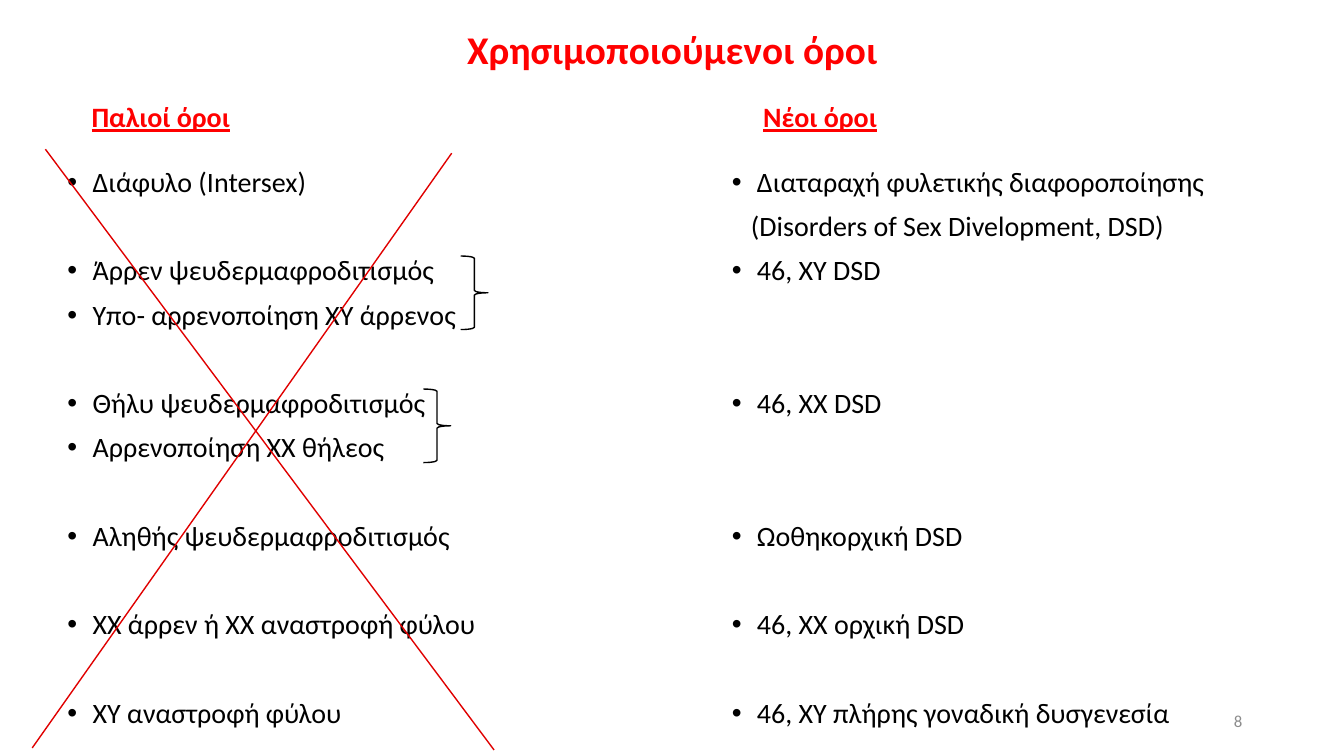
"""Build the slide that sets old terms beside new ones."""
from dataclasses import dataclass

import lxml.etree
import pptx
import pptx.dml.color
import pptx.enum.shapes
import pptx.enum.text
import pptx.oxml.ns
import pptx.util

Inches = pptx.util.Inches
Pt = pptx.util.Pt
ALIGN = pptx.enum.text.PP_ALIGN
ANCHOR = pptx.enum.text.MSO_ANCHOR

COLORS = {"ink": "000000", "red": "FF0000", "cross": "E00000", "gray": "8C8C8C"}
FONT = "Calibri"
PITCH = 31.6
BEFORE = 10


@dataclass
class Label:
    text: str
    box: tuple[float, float, float, float]
    size: int
    color: str = "red"
    bold: bool = True
    under: bool = False
    align: ALIGN = ALIGN.LEFT
    anchor: ANCHOR = ANCHOR.TOP


@dataclass
class Term:
    text: str
    gap: int = 0
    bullet: bool = True


@dataclass
class Column:
    box: tuple[float, float, float, float]
    terms: list[Term]


@dataclass
class Stroke:
    start: tuple[float, float]
    end: tuple[float, float]


LABELS = [
    Label("Χρησιμοποιούμενοι όροι", (0.09, 0.2, 13.15, 0.57), 28, align=ALIGN.CENTER),
    Label("Παλιοί όροι", (0.81, 0.94, 2.2, 0.44), 20, under=True),
    Label("Νέοι όροι", (7.47, 0.94, 1.74, 0.34), 20, under=True),
    Label("8", (9.42, 6.95, 3, 0.4), 12, "gray", False,
          align=ALIGN.RIGHT, anchor=ANCHOR.MIDDLE),
]

COLUMNS = [
    Column((7.16, 1.62, 6.17, 5.88), [
        Term("Διαταραχή φυλετικής διαφοροποίησης"),
        Term("(Disorders of Sex Divelopment, DSD)", bullet=False),
        Term("46, XY DSD"),
        Term("46, XX DSD", 2),
        Term("Ωοθηκορχική DSD", 2),
        Term("46, XX ορχική DSD", 1),
        Term("46, XY πλήρης γοναδική δυσγενεσία", 1),
    ]),
    Column((0.57, 1.62, 5.74, 5.88), [
        Term("Διάφυλο (Intersex)"),
        Term("Άρρεν ψευδερμαφροδιτισμός", 1),
        Term("Υπο- αρρενοποίηση XY άρρενος"),
        Term("Θήλυ ψευδερμαφροδιτισμός", 1),
        Term("Αρρενοποίηση ΧΧ θήλεος"),
        Term("Αληθής ψευδερμαφροδιτισμός", 1),
        Term("XX άρρεν ή ΧΧ αναστροφή φύλου", 1),
        Term("XY αναστροφή φύλου", 1),
    ]),
]

BRACES = [(4.57, 2.54), (4.2, 3.86)]
CROSS = [Stroke((0.45, 1.48), (4.9, 7.44)), Stroke((4.48, 1.52), (0.32, 7.42))]


def tint(name: str) -> pptx.dml.color.RGBColor:
    return pptx.dml.color.RGBColor.from_string(COLORS[name])


def add_frame(slide, box: tuple[float, float, float, float]):
    frame = slide.shapes.add_textbox(*map(Inches, box)).text_frame
    frame.word_wrap = True
    return frame


def add_run(para, text: str, size: int, color: str,
            bold: bool = False, under: bool = False) -> None:
    run = para.add_run()
    run.text = text
    run.font.name = FONT
    run.font.size = Pt(size)
    run.font.bold = bold
    run.font.underline = under
    run.font.color.rgb = tint(color)


def set_indent(para, bullet: bool) -> None:
    props = para._p.get_or_add_pPr()
    props.set("marL", str(Inches(0.25 if bullet else 0.19)))
    props.set("indent", str(Inches(-0.25 if bullet else 0)))
    if bullet:
        face = lxml.etree.SubElement(props, pptx.oxml.ns.qn("a:buFont"))
        face.set("typeface", "Arial")
        mark = lxml.etree.SubElement(props, pptx.oxml.ns.qn("a:buChar"))
        mark.set("char", "•")


def draw_label(slide, label: Label) -> None:
    frame = add_frame(slide, label.box)
    frame.vertical_anchor = label.anchor
    para = frame.paragraphs[0]
    para.alignment = label.align
    add_run(para, label.text, label.size, label.color, label.bold, label.under)


def draw_column(slide, column: Column) -> None:
    frame = add_frame(slide, column.box)
    for place, term in enumerate(column.terms):
        para = frame.add_paragraph() if place else frame.paragraphs[0]
        set_indent(para, term.bullet)
        para.line_spacing = 0.9
        if place:
            para.space_before = Pt(BEFORE + PITCH * term.gap)
        add_run(para, term.text, 20, "ink")


def draw_brace(slide, left: float, top: float) -> None:
    kind = pptx.enum.shapes.MSO_SHAPE.RIGHT_BRACE
    brace = slide.shapes.add_shape(
        kind, Inches(left), Inches(top), Inches(0.27), Inches(0.73))
    brace.shadow.inherit = False
    brace.fill.background()
    brace.line.color.rgb = tint("ink")
    brace.line.width = Pt(1)


def draw_stroke(slide, stroke: Stroke) -> None:
    kind = pptx.enum.shapes.MSO_CONNECTOR.STRAIGHT
    line = slide.shapes.add_connector(
        kind, *map(Inches, stroke.start + stroke.end))
    line.line.color.rgb = tint("cross")
    line.line.width = Pt(1)
    lxml.etree.SubElement(line._element.spPr, pptx.oxml.ns.qn("a:effectLst"))


def main() -> None:
    deck = pptx.Presentation()
    deck.slide_width, deck.slide_height = Inches(13.33), Inches(7.5)
    slide = deck.slides.add_slide(deck.slide_layouts[6])
    for column in COLUMNS:
        draw_column(slide, column)
    for label in LABELS:
        draw_label(slide, label)
    for left, top in BRACES:
        draw_brace(slide, left, top)
    for stroke in CROSS:
        draw_stroke(slide, stroke)
    deck.save("out.pptx")


if __name__ == "__main__":
    main()
